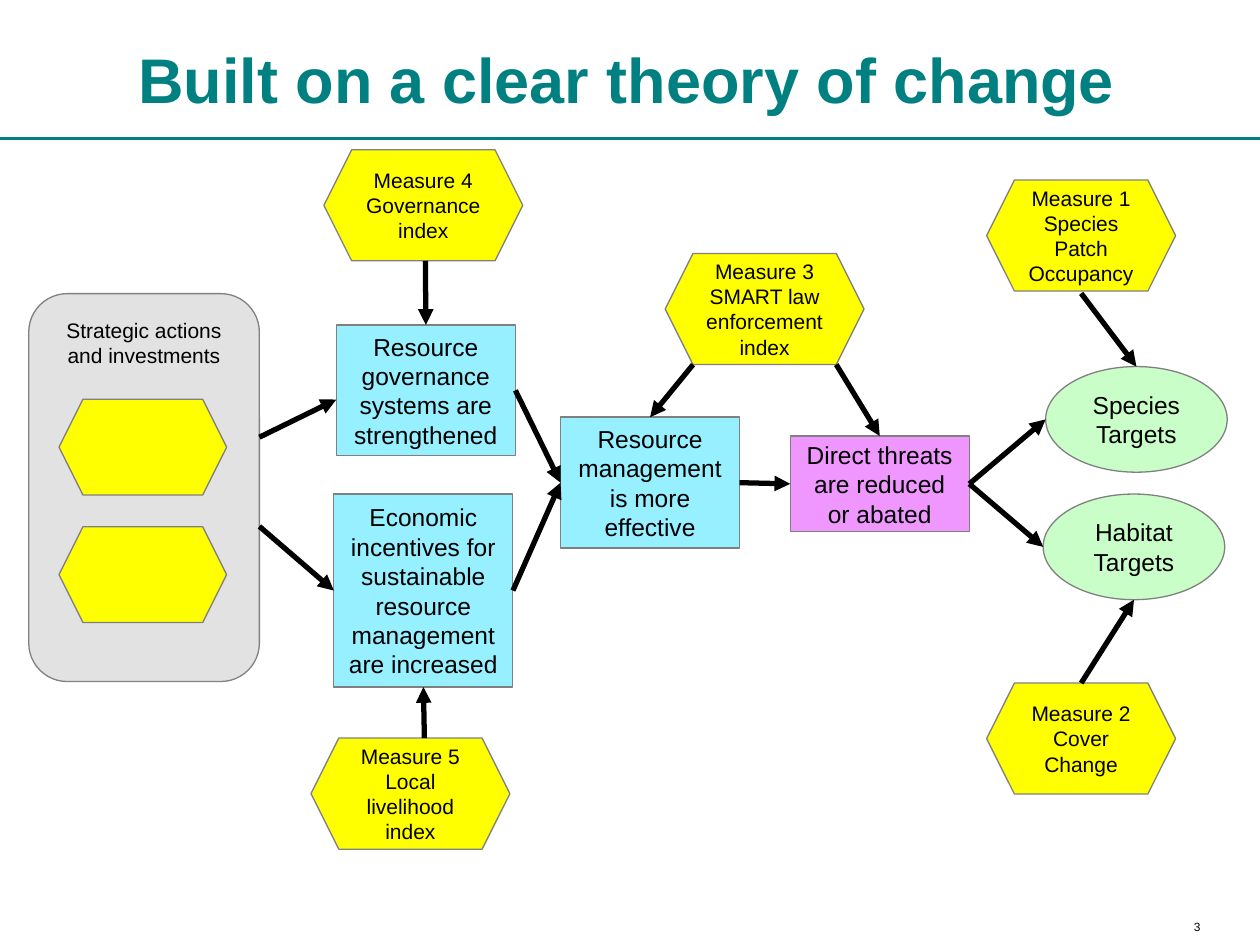
from lxml.etree import SubElement
from pptx import Presentation
from pptx.dml.color import RGBColor
from pptx.enum.shapes import MSO_CONNECTOR, MSO_SHAPE
from pptx.enum.text import MSO_ANCHOR, MSO_AUTO_SIZE, PP_ALIGN
from pptx.oxml.ns import qn
from pptx.util import Cm, Pt

HUES = {
    "teal": "008080", "black": "000000", "edge": "808080", "gray": "E2E2E2",
    "yellow": "FFFF00", "blue": "97F0FF", "pink": "EF97FF", "green": "C9FEC8",
}
PAD = 0.25
TOP, LEFT, RIGHT, BASE = (0.5, 0), (0, 0.5), (1, 0.5), (0.5, 1)


def hue(name):
    return RGBColor.from_string(HUES[name])


def write(shape, text, size=14, color="black", bold=False, align=PP_ALIGN.CENTER,
          anchor=MSO_ANCHOR.MIDDLE, pad=(PAD, PAD), wrap=True):
    frame = shape.text_frame
    frame.auto_size = MSO_AUTO_SIZE.NONE
    frame.word_wrap = wrap
    frame.vertical_anchor = anchor
    frame.margin_left = frame.margin_right = Cm(pad[0])
    frame.margin_top = frame.margin_bottom = Cm(pad[1])
    frame.text = text
    for para in frame.paragraphs:
        para.alignment = align
        para.space_before = Pt(0)
        font = para.font
        font.name, font.size, font.bold = "Arial", Pt(size), bold
        font.color.rgb = hue(color)


def box(shapes, kind, place, fill, text="", **style):
    shape = shapes.add_shape(kind, *map(Cm, place))
    shape.shadow.inherit = False
    shape.fill.solid()
    shape.fill.fore_color.rgb = hue(fill)
    shape.line.color.rgb = hue("edge")
    shape.line.width = Pt(0.75)
    if text:
        write(shape, text, **style)
    return shape


def stage(shapes, x, y, high, fill, text):
    return box(shapes, MSO_SHAPE.RECTANGLE, (x, y, 3.61, high), fill, text)


def target(shapes, x, y, text):
    return box(shapes, MSO_SHAPE.OVAL, (x, y, 3.66, 2.13), "green", text, wrap=False)


def measure(shapes, x, y, wide, text):
    return box(shapes, MSO_SHAPE.HEXAGON, (x, y, wide, 2.24), "yellow", text, size=12)


def line(shapes, start, end, color, width):
    link = shapes.add_connector(MSO_CONNECTOR.STRAIGHT, *start, *end)
    link.line.color.rgb = hue(color)
    link.line.width = Pt(width)
    SubElement(link._element.spPr, qn("a:effectLst"))
    return link


def spot(shape, part):
    """Point at the given fractions of a shape's width and height."""
    return (int(shape.left + part[0] * shape.width),
            int(shape.top + part[1] * shape.height))


def arrow(shapes, first, leave, last, enter):
    link = line(shapes, spot(first, leave), spot(last, enter), "black", 3)
    SubElement(link.line._get_or_add_ln(), qn("a:tailEnd"), type="triangle")


def panel(shapes):
    parts = shapes.add_group_shape().shapes
    back = box(parts, MSO_SHAPE.ROUNDED_RECTANGLE, (0.58, 5.92, 4.65, 7.82), "gray",
               "Strategic actions and investments", size=12, anchor=MSO_ANCHOR.TOP)
    for y in (8.05, 10.62):
        box(parts, MSO_SHAPE.HEXAGON, (1.19, y, 3.38, 1.93), "yellow")
    return back


def main():
    deck = Presentation()
    deck.slide_width, deck.slide_height = Cm(25.4), Cm(19.05)
    slide = deck.slides.add_slide(deck.slide_layouts[5])
    shapes = slide.shapes

    # Title, rule and page number
    title = shapes.title
    title.left, title.top, title.width, title.height = map(Cm, (2.79, 0.43, 21.39, 2.31))
    write(title, "Built on a clear theory of change", size=36, color="teal",
          bold=True, align=PP_ALIGN.LEFT, pad=(0, 0.13))
    line(shapes, (0, Cm(2.79)), (Cm(25.4), Cm(2.79)), "teal", 2)
    page = shapes.add_textbox(Cm(23.72), Cm(18.54), Cm(0.48), Cm(0.38))
    write(page, "3", size=6.8, align=PP_ALIGN.RIGHT, anchor=MSO_ANCHOR.TOP,
          pad=(0, 0), wrap=False)

    # Chain of results
    acts = panel(shapes)
    rule = stage(shapes, 6.78, 6.55, 2.64, "blue",
                 "Resource governance systems are strengthened")
    gain = stage(shapes, 6.73, 9.96, 3.89, "blue",
                 "Economic incentives for sustainable resource management are increased")
    manage = stage(shapes, 11.3, 8.41, 2.64, "blue",
                   "Resource management is more effective")
    threat = stage(shapes, 15.93, 8.79, 1.93, "pink",
                   "Direct threats are reduced or abated")
    species = target(shapes, 21.08, 7.39, "Species\nTargets")
    habitat = target(shapes, 21.03, 9.96, "Habitat\nTargets")

    # Measures
    patch = measure(shapes, 19.89, 3.63, 3.81, "Measure 1\nSpecies Patch Occupancy")
    cover = measure(shapes, 19.89, 13.77, 3.81, "Measure 2\nCover Change")
    law = measure(shapes, 13.41, 5.11, 4.01, "Measure 3\nSMART law enforcement index")
    index = measure(shapes, 6.53, 3.02, 4.01, "Measure 4\nGovernance index")
    local = measure(shapes, 6.27, 14.88, 4.01, "Measure 5\nLocal livelihood index")

    # Arrows
    for link in (
        (acts, (1, 0.37), rule, (0, 0.57)),
        (acts, (1, 0.6), gain, LEFT),
        (rule, RIGHT, manage, LEFT),
        (gain, RIGHT, manage, LEFT),
        (manage, RIGHT, threat, LEFT),
        (threat, RIGHT, species, LEFT),
        (threat, RIGHT, habitat, LEFT),
        (patch, (0.5, 1.02), species, TOP),
        (cover, TOP, habitat, BASE),
        (law, (0.14, 1), manage, TOP),
        (law, (0.86, 1), threat, TOP),
        (index, (0.51, 1), rule, TOP),
        (local, (0.57, 0), gain, BASE),
    ):
        arrow(shapes, *link)

    deck.save("out.pptx")


if __name__ == "__main__":
    main()
